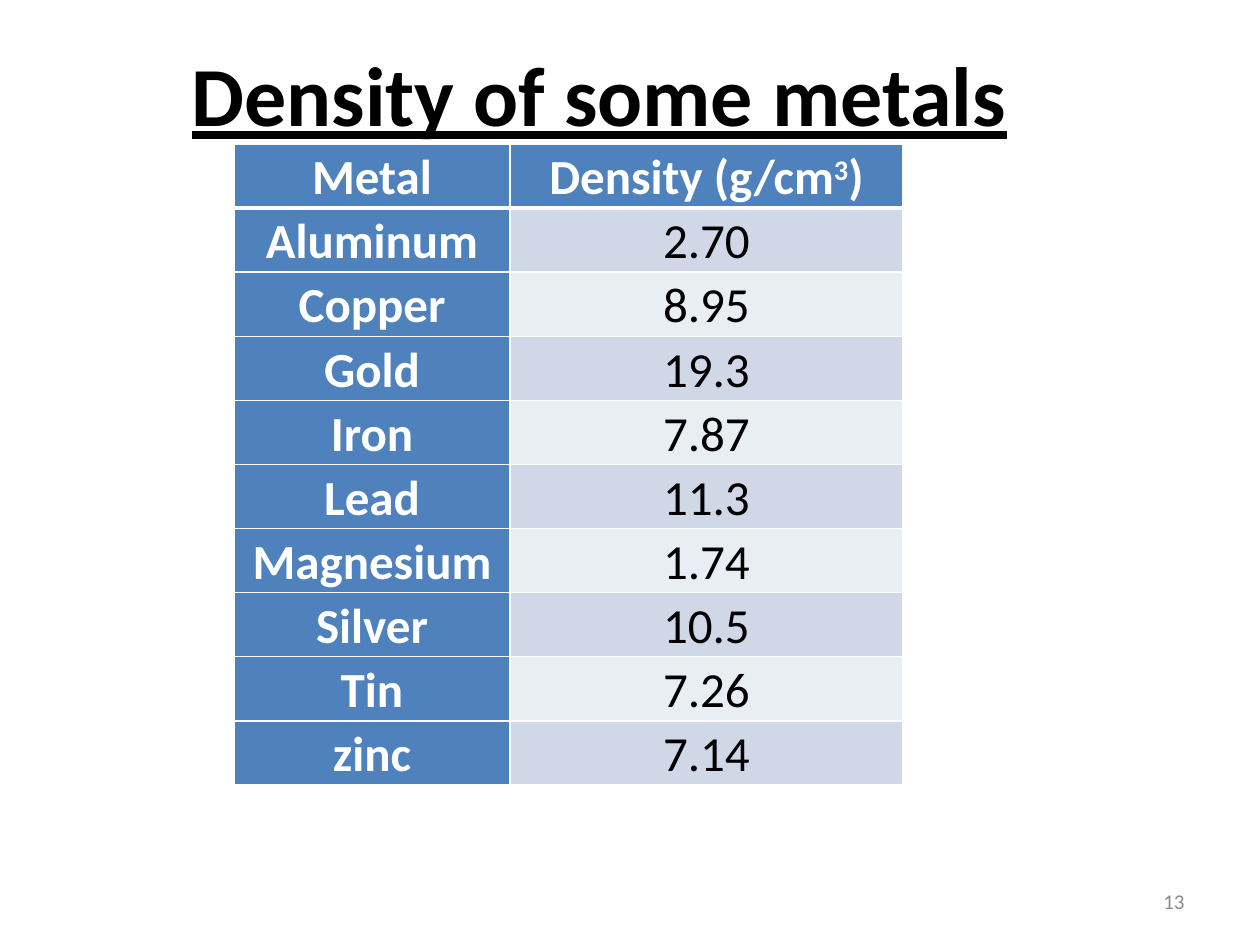
from lxml.etree import SubElement
from pptx import Presentation
from pptx.dml.color import RGBColor
from pptx.enum.text import MSO_ANCHOR, PP_ALIGN
from pptx.oxml.ns import qn
from pptx.util import Pt

PX = 914400 // 126
C = {"head": "4F81BD", "odd": "D0D8E8", "even": "E9EDF4",
     "white": "FFFFFF", "black": "000000", "grey": "8C8C8C"}


def add_text(p, text, size, color, bold=False, underline=False, align=None, baseline=None):
    if align is not None:
        p.alignment = align
    r = p.add_run()
    r.text = text
    f = r.font
    f.name, f.size, f.bold, f.underline = "Calibri", Pt(size), bold, underline
    f.color.rgb = RGBColor.from_string(C[color])
    if baseline:
        r._r.get_or_add_rPr().set("baseline", str(baseline))


def add_borders(cell, bottom):
    tcPr = cell._tc.get_or_add_tcPr()
    for side, width in (("L", 1), ("R", 1), ("T", 1), ("B", bottom)):
        ln = SubElement(tcPr, qn(f"a:ln{side}"), w=str(Pt(width)))
        fill = SubElement(ln, qn("a:solidFill"))
        SubElement(fill, qn("a:srgbClr"), val=C["white"])


prs = Presentation()
prs.slide_width, prs.slide_height = 1260 * PX, 945 * PX
s = prs.slides.add_slide(prs.slide_layouts[5])

title = s.shapes.title
title.left, title.top, title.width, title.height = 179 * PX, 42 * PX, 1060 * PX, 102 * PX
tf = title.text_frame
tf.margin_top = tf.margin_bottom = 0
tf.vertical_anchor = MSO_ANCHOR.MIDDLE
add_text(tf.paragraphs[0], "Density of some metals", 48, "black",
         bold=True, underline=True, align=PP_ALIGN.LEFT)

rows = [("Metal", "Density (g/cm"), ("Aluminum", "2.70"), ("Copper", "8.95"),
        ("Gold", "19.3"), ("Iron", "7.87"), ("Lead", "11.3"), ("Magnesium", "1.74"),
        ("Silver", "10.5"), ("Tin", "7.26"), ("zinc", "7.14")]
table = s.shapes.add_table(len(rows), 2, 234 * PX, 144 * PX, 669 * PX, 620 * PX).table
table.first_col = True
table.columns[0].width, table.columns[1].width = 276 * PX, 393 * PX
for i, row in enumerate(rows):
    table.rows[i].height = 62 * PX
    for j, text in enumerate(row):
        cell = table.cell(i, j)
        head = i == 0 or j == 0
        add_borders(cell, 3 if i == 0 else 1)
        cell.fill.solid()
        band = "head" if head else "odd" if i % 2 else "even"
        cell.fill.fore_color.rgb = RGBColor.from_string(C[band])
        cell.margin_left = cell.margin_right = 9 * PX
        cell.margin_top = cell.margin_bottom = 0
        p = cell.text_frame.paragraphs[0]
        p.line_spacing = 1.07
        color = "white" if head else "black"
        add_text(p, text, 28, color, bold=head, align=PP_ALIGN.CENTER)
        if (i, j) == (0, 1):
            add_text(p, "3", 28, color, bold=True, baseline=30000)
            add_text(p, ")", 28, color, bold=True)

sp = s.shapes.add_textbox(903 * PX, 876 * PX, 294 * PX, 50 * PX)
tf = sp.text_frame
tf.word_wrap = True
tf.vertical_anchor = MSO_ANCHOR.MIDDLE
add_text(tf.paragraphs[0], "13", 12, "grey", align=PP_ALIGN.RIGHT)

prs.save("out.pptx")
